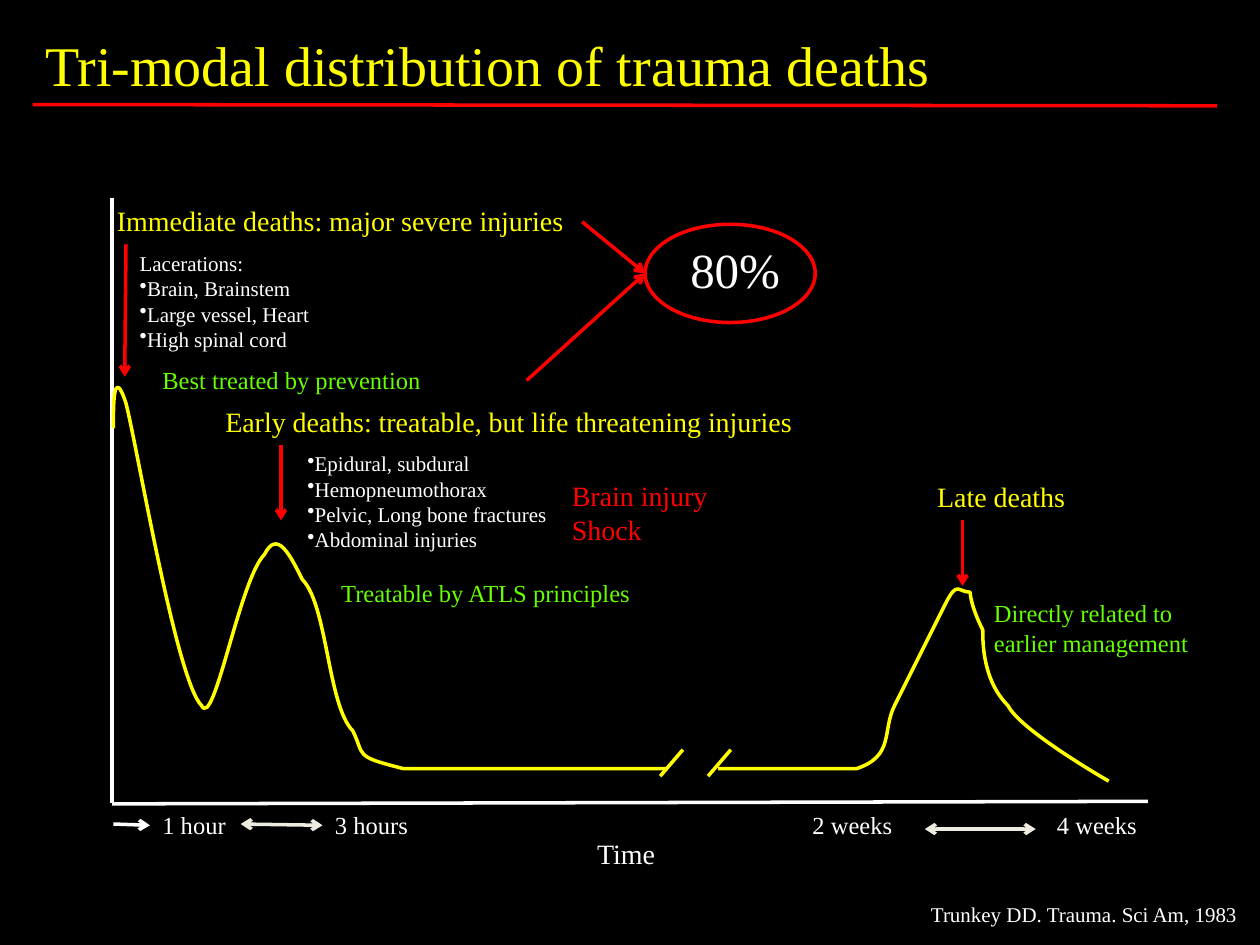
from lxml import etree
from pptx import Presentation
from pptx import util as u
from pptx.dml.color import RGBColor
from pptx.enum import shapes, text
from pptx.oxml import ns

COLORS = {
    "black": "000000", "white": "FFFFFF", "ivory": "EEECE1",
    "yellow": "FFFF00", "red": "FF0000", "green": "66FF00",
}


class TraumaSlide:
    """Style and current slide, measured on a grid of 100 columns by 75 rows."""

    font_name = "Times New Roman"
    line_width = u.Pt(2)
    cell = u.Inches(0.1)

    def __init__(self, presentation):
        self.slide = presentation.slides.add_slide(presentation.slide_layouts[5])
        fill = self.slide.background.fill
        fill.solid()
        fill.fore_color.rgb = self.color("black")

    def color(self, name):
        return RGBColor.from_string(COLORS[name])

    def grid(self, *cells):
        return [round(value * self.cell) for value in cells]

    def set_text(self, frame, paragraphs, size, color, wrap=False):
        frame_format = {
            "word_wrap": wrap,
            "auto_size": text.MSO_AUTO_SIZE.SHAPE_TO_FIT_TEXT,
            "vertical_anchor": text.MSO_ANCHOR.TOP,
        }
        for name, value in frame_format.items():
            setattr(frame, name, value)
        font_format = {"name": self.font_name, "size": u.Pt(size)}
        for index, content in enumerate(paragraphs):
            paragraph = frame.paragraphs[0] if index == 0 else frame.add_paragraph()
            paragraph.alignment = text.PP_ALIGN.LEFT
            if content.startswith("•"):
                properties = paragraph._p.get_or_add_pPr()
                etree.SubElement(properties, ns.qn("a:buChar"), char="•")
            run = paragraph.add_run()
            run.text = content.removeprefix("•")
            for name, value in font_format.items():
                setattr(run.font, name, value)
            run.font.color.rgb = self.color(color)

    def title(self, content, box, size, color):
        shape = self.slide.shapes.title
        for name, value in zip(("left", "top", "width", "height"), self.grid(*box)):
            setattr(shape, name, value)
        self.set_text(shape.text_frame, [content], size, color)

    def label(self, paragraphs, box, size, color, wrap=False):
        shape = self.slide.shapes.add_textbox(*self.grid(*box))
        self.set_text(shape.text_frame, paragraphs, size, color, wrap)

    def outline(self, shape, color):
        shape.line.color.rgb = self.color(color)
        shape.line.width = self.line_width

    def line(self, start, end, color, arrows=()):
        connector = self.slide.shapes.add_connector(
            shapes.MSO_CONNECTOR.STRAIGHT, *self.grid(*start, *end))
        self.outline(connector, color)
        for arrow in arrows:
            etree.SubElement(connector.line._get_or_add_ln(), ns.qn(f"a:{arrow}"), type="arrow")
        etree.SubElement(connector._element.spPr, ns.qn("a:effectLst"))

    def ellipse(self, box, color):
        shape = self.slide.shapes.add_shape(shapes.MSO_SHAPE.OVAL, *self.grid(*box))
        shape.shadow.inherit = False
        shape.fill.background()
        self.outline(shape, color)

    def curve(self, points, color):
        builder = self.slide.shapes.build_freeform(*points[0], scale=self.cell)
        builder.add_line_segments(points[1:], close=False)
        shape = builder.convert_to_shape()
        shape.shadow.inherit = False
        shape.fill.background()
        self.outline(shape, color)
        segments = list(shape._element.iter(ns.qn("a:lnTo")))
        for first in range(0, len(segments), 3):
            bezier = etree.Element(ns.qn("a:cubicBezTo"))
            segments[first].addprevious(bezier)
            for segment in segments[first:first + 3]:
                bezier.append(segment[0])
                segment.getparent().remove(segment)


def main():
    presentation = Presentation()
    presentation.slide_width, presentation.slide_height = u.Inches(10), u.Inches(7.5)
    page = TraumaSlide(presentation)
    one_way, both_ways = ("tailEnd",), ("headEnd", "tailEnd")

    page.title("Tri-modal distribution of trauma deaths", (2.6, 1.9, 72.9, 6.4), 32, "yellow")
    page.line((2.6, 8.3), (96.6, 8.4), "red")

    page.line((8.9, 15.7), (8.9, 63.7), "white")
    page.line((91.1, 63.6), (8.9, 63.8), "white")
    page.curve([
        (9, 34.5), (9.1, 31.7), (9.2, 28.9), (10.3, 32.4),
        (11.4, 36), (13.8, 54), (15.6, 56), (17.3, 57.9), (19.3, 45.7), (20.8, 44),
        (22.3, 42.4), (23.3, 43.7), (24.4, 46.1), (25.5, 48.4), (26.2, 55.6), (27.5, 58),
        (28.9, 60.5), (28.2, 60.1), (32.4, 60.6), (36.7, 61.1), (53.1, 60.9), (53.1, 60.9),
    ], "yellow")
    page.curve([
        (57.3, 60.6), (61.7, 61), (66.2, 61.4), (68.5, 60.6),
        (70.8, 59.8), (70.3, 57.9), (71.4, 55.8), (72.4, 53.7), (74.2, 49.5), (75.1, 48),
        (76, 46.5), (76.2, 46.8), (76.7, 47.1), (77.2, 47.4), (77.4, 48.3), (77.9, 49.8),
        (78.4, 51.3), (78.1, 54.1), (79.7, 56.1), (81.3, 58.1), (87.5, 61.6), (87.5, 61.6),
    ], "yellow")
    for left in (52.4, 56.2):
        page.line((left + 1.8, 59.5), (left, 61.6), "yellow")

    for content, left, width in (("1 hour", 11.9, 7.2), ("3 hours", 25.6, 7.9),
                                 ("2 weeks", 63.5, 8.4), ("4 weeks", 82.9, 8.4)):
        page.label([content], (left, 63.8, width, 3.4), 14, "white")
    page.label(["Time"], (46.4, 65.9, 6.7, 3.7), 16, "white")
    page.line((9, 65.4), (11.9, 65.5), "white", one_way)
    page.line((19.1, 65.4), (25.6, 65.5), "ivory", both_ways)
    page.line((73.4, 65.8), (82.2, 65.8), "ivory", both_ways)

    for content, box in (
        ("Immediate deaths: major severe injuries", (8.3, 15.7, 37.9, 3.7)),
        ("Early deaths: treatable, but life threatening injuries", (16.9, 31.6, 47.6, 3.7)),
        ("Late deaths", (73.4, 37.6, 12.3, 3.7)),
    ):
        page.label([content], box, 16, "yellow")
    page.label(["Lacerations:", "•Brain, Brainstem", "•Large vessel, Heart", "•High spinal cord"],
               (10.1, 19.4, 15.8, 9.1), 12, "white")
    page.label(["•Epidural, subdural", "•Hemopneumothorax", "•Pelvic, Long bone fractures",
                "•Abdominal injuries"], (23.4, 35.3, 21.1, 9.1), 12, "white")
    for content, box in (
        ("Best treated by prevention", (11.9, 28.5, 29.9, 3.4)),
        ("Treatable by ATLS principles", (26.1, 45.4, 26.3, 3.4)),
        ("Directly related to earlier management", (77.9, 47, 19.1, 5.7)),
    ):
        page.label([content], box, 14, "green", wrap=True)
    page.label(["Brain injury", "Shock"], (44.4, 37.5, 12.9, 6.4), 16, "red")

    page.label(["80%"], (53.8, 18.5, 9.2, 5.7), 28, "white")
    page.ellipse((51.2, 17.8, 13.5, 7.8), "red")
    for start, end in (
        ((10, 19.4), (9.9, 29.9)), ((22.3, 35.3), (22.3, 41.3)), ((76.4, 41.3), (76.4, 46.5)),
        ((46.2, 17.6), (51.2, 21.7)), ((41.8, 30.2), (51.2, 21.7)),
    ):
        page.line(start, end, "red", one_way)

    page.label(["Trunkey DD. Trauma. Sci Am, 1983"], (72.9, 71.1, 26.5, 3), 12, "white")
    presentation.save("out.pptx")


if __name__ == "__main__":
    main()
